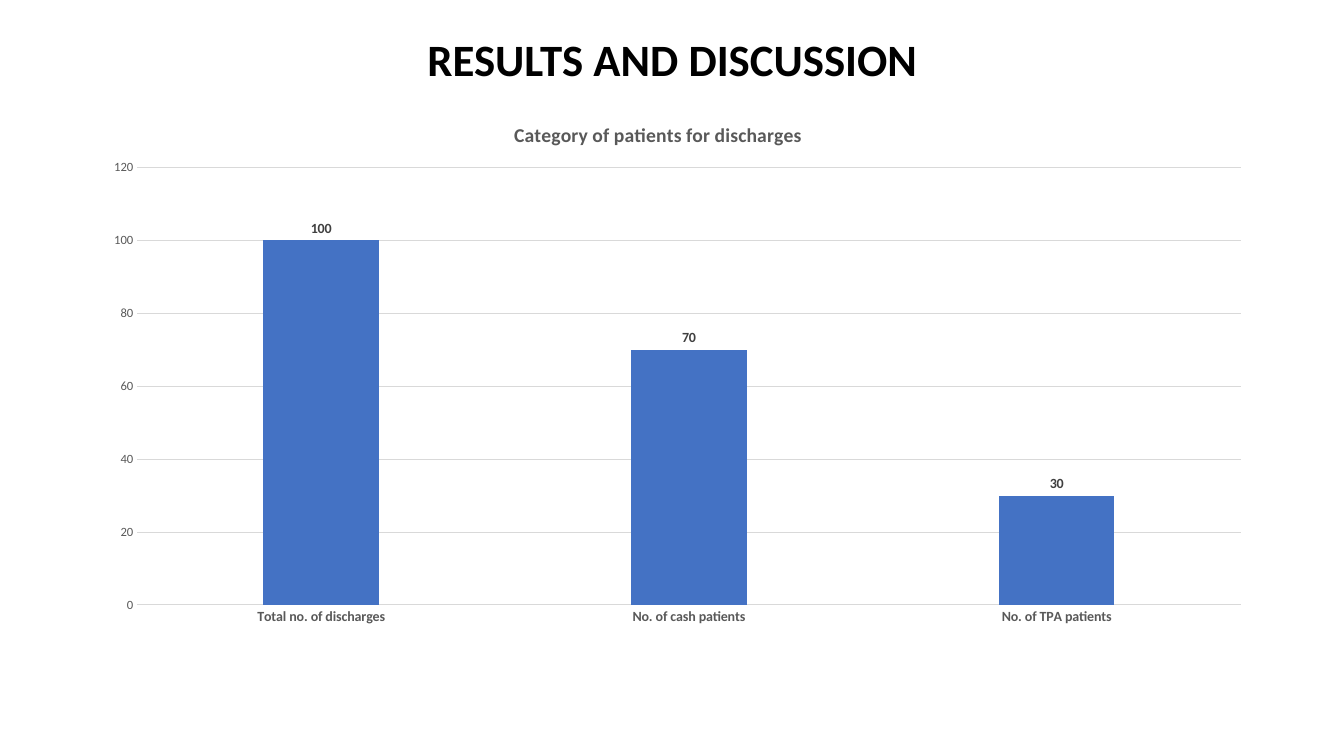
from lxml import etree
from pptx import Presentation
from pptx import util as u
from pptx.chart import data as chart_data
from pptx.dml import color
from pptx.enum import chart as ch, text
from pptx.oxml import ns

THEME = {
    "font": "Calibri",
    "title": "000000", "bar": "4472C4", "label": "404040",
    "axis": "595959", "grid": "D9D9D9",
    "title_size": 32, "heading_size": 14, "label_size": 10, "scale_size": 9,
}


def style(font, size, tone, bold=False):
    font.name = THEME["font"]
    font.size = u.Pt(THEME[size])
    font.color.rgb = color.RGBColor.from_string(THEME[tone])
    font.bold = bold


def place(parent, index, **settings):
    """Give a chart part a manual layout, in shares of the chart's size."""
    for old in parent.findall(ns.qn("c:layout")):
        parent.remove(old)
    layout = etree.Element(ns.qn("c:layout"))
    manual = etree.SubElement(layout, ns.qn("c:manualLayout"))
    for key, value in settings.items():
        etree.SubElement(manual, ns.qn(f"c:{key}")).set("val", str(value))
    parent.insert(index, layout)


deck = Presentation()
deck.slide_width, deck.slide_height = u.Inches(13.33), u.Inches(7.5)
slide = deck.slides.add_slide(deck.slide_layouts[5])

# Slide title
heading = slide.shapes.title
heading.left, heading.top = u.Inches(0.92), u.Inches(-0.11)
heading.width, heading.height = u.Inches(11.5), u.Inches(1.45)
heading.text_frame.text = "RESULTS AND DISCUSSION"
heading.text_frame.vertical_anchor = text.MSO_ANCHOR.MIDDLE
headline = heading.text_frame.paragraphs[0]
headline.alignment = text.PP_ALIGN.CENTER
headline.line_spacing = 0.9
style(headline.runs[0].font, "title_size", "title", True)

# Patient categories
patients = chart_data.CategoryChartData()
patients.categories = ["Total no. of discharges", "No. of cash patients", "No. of TPA patients"]
patients.add_series("Series 1", (100, 70, 30))
discharges = slide.shapes.add_chart(
    ch.XL_CHART_TYPE.COLUMN_CLUSTERED,
    u.Inches(0.81), u.Inches(1.01), u.Inches(11.5), u.Inches(5.3), patients).chart
style(discharges.font, "label_size", "title")
discharges.has_legend = False

# Chart heading
discharges.has_title = True
caption = discharges.chart_title
caption.text_frame.text = "Category of patients for discharges"
style(caption.text_frame.paragraphs[0].runs[0].font, "heading_size", "axis", True)
place(caption._element, 1, xMode="edge", yMode="edge", x=0.37, y=0.03)

# Columns and their values
columns = discharges.plots[0]
columns.vary_by_categories = False
columns.gap_width, columns.overlap = 219, -27
bars = columns.series[0].format.fill
bars.solid()
bars.fore_color.rgb = color.RGBColor.from_string(THEME["bar"])
columns.has_data_labels = True
counts = columns.data_labels
counts.show_value = True
counts.position = ch.XL_LABEL_POSITION.OUTSIDE_END
style(counts.font, "label_size", "label", True)
place(discharges._chartSpace.chart.plotArea, 0, layoutTarget="inner",
      xMode="edge", yMode="edge", x=0.048, y=0.123, w=0.952, h=0.819)

# Axes and gridlines
categories, scale = discharges.category_axis, discharges.value_axis
for axis in (categories, scale):
    axis.major_tick_mark = axis.minor_tick_mark = ch.XL_TICK_MARK.NONE
style(categories.tick_labels.font, "label_size", "axis", True)
style(scale.tick_labels.font, "scale_size", "axis")
scale.minimum_scale, scale.maximum_scale, scale.major_unit = 0, 120, 20
scale.has_major_gridlines = True
scale.format.line.fill.background()
for rule in (categories.format.line, scale.major_gridlines.format.line):
    rule.width = u.Pt(0.75)
    rule.color.rgb = color.RGBColor.from_string(THEME["grid"])

deck.save("out.pptx")
